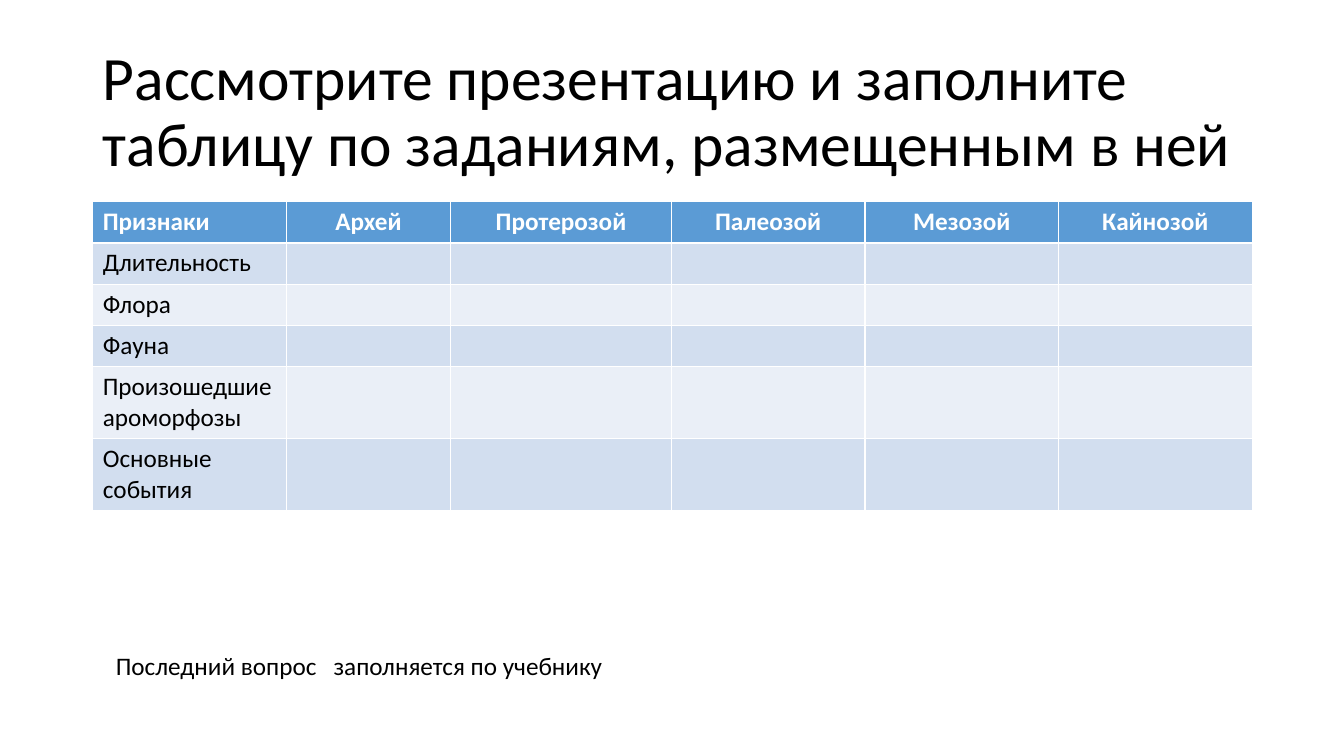
from dataclasses import dataclass

from lxml import etree
from pptx import Presentation
from pptx.dml.color import RGBColor as RGB
from pptx.enum.text import MSO_ANCHOR as Anchor, MSO_AUTO_SIZE as AutoSize, PP_ALIGN as Align
from pptx.oxml.ns import qn
from pptx.util import Inches, Pt

# Content
TITLE = "Рассмотрите презентацию и заполните таблицу по заданиям, размещенным в ней"
ERAS = ["Архей", "Протерозой", "Палеозой", "Мезозой", "Кайнозой"]
FEATURES = ["Длительность", "Флора", "Фауна", "Произошедшие ароморфозы", "Основные события"]
NOTE = "Последний вопрос\tзаполняется по учебнику"

# Table measures in inches
COLUMN_WIDTHS = [1.92, 1.63, 2.19, 1.92, 1.92, 1.92]
ROW_HEIGHTS = [0.41, 0.41, 0.41, 0.41, 0.71, 0.71]
LEFT, WIDTH = 0.92, 11.5
NOTE_TAB = 2.16


@dataclass(frozen=True)
class Theme:
    font: str = "Calibri"
    title_size: int = 44
    text_size: int = 18
    text: RGB = RGB(0, 0, 0)
    header_text: RGB = RGB(255, 255, 255)
    header_fill: RGB = RGB.from_string("5B9BD5")
    bands: tuple = (RGB.from_string("D2DEEF"), RGB.from_string("EAEFF7"))


THEME = Theme()


def style(para, size, color, bold=False, align=Align.LEFT):
    para.alignment = align
    font = para.font
    font.name, font.size, font.bold = THEME.font, Pt(size), bold
    font.color.rgb = color


def add_title(page):
    title = page.shapes.title
    title.left, title.top = Inches(LEFT), Inches(0.4)
    title.width, title.height = Inches(WIDTH), Inches(1.45)
    frame = title.text_frame
    frame.text = TITLE
    frame.word_wrap = True
    frame.auto_size = AutoSize.NONE
    frame.vertical_anchor = Anchor.MIDDLE
    para = frame.paragraphs[0]
    para.line_spacing = 0.9
    style(para, THEME.title_size, THEME.text)


def add_era_table(page):
    rows = [["Признаки"] + ERAS] + [[feature] + [""] * len(ERAS) for feature in FEATURES]
    table = page.shapes.add_table(
        len(rows), len(rows[0]), Inches(LEFT), Inches(2),
        Inches(WIDTH), Inches(sum(ROW_HEIGHTS))).table
    for column, width in zip(table.columns, COLUMN_WIDTHS):
        column.width = Inches(width)
    for row, height in zip(table.rows, ROW_HEIGHTS):
        row.height = Inches(height)

    for r, values in enumerate(rows):
        header = r == 0
        fill = THEME.header_fill if header else THEME.bands[(r - 1) % 2]
        color = THEME.header_text if header else THEME.text
        for c, value in enumerate(values):
            cell = table.cell(r, c)
            cell.text = value
            cell.fill.solid()
            cell.fill.fore_color.rgb = fill
            align = Align.CENTER if header and c else Align.LEFT
            style(cell.text_frame.paragraphs[0], THEME.text_size, color, header, align)


def add_note(page):
    box = page.shapes.add_textbox(Inches(1.05), Inches(6.4), Inches(8.82), Inches(0.4))
    frame = box.text_frame
    frame.word_wrap = True
    frame.auto_size = AutoSize.SHAPE_TO_FIT_TEXT
    frame.text = NOTE
    para = frame.paragraphs[0]
    # Tab stop for the gap inside the sentence
    tabs = etree.SubElement(para._p.get_or_add_pPr(), qn("a:tabLst"))
    etree.SubElement(tabs, qn("a:tab"), pos=str(Inches(NOTE_TAB)), algn="l")
    style(para, THEME.text_size, THEME.text)


def main():
    deck = Presentation()
    deck.slide_width, deck.slide_height = Inches(13.33), Inches(7.5)
    page = deck.slides.add_slide(deck.slide_layouts[5])
    add_title(page)
    add_era_table(page)
    add_note(page)
    deck.save("out.pptx")


if __name__ == "__main__":
    main()
